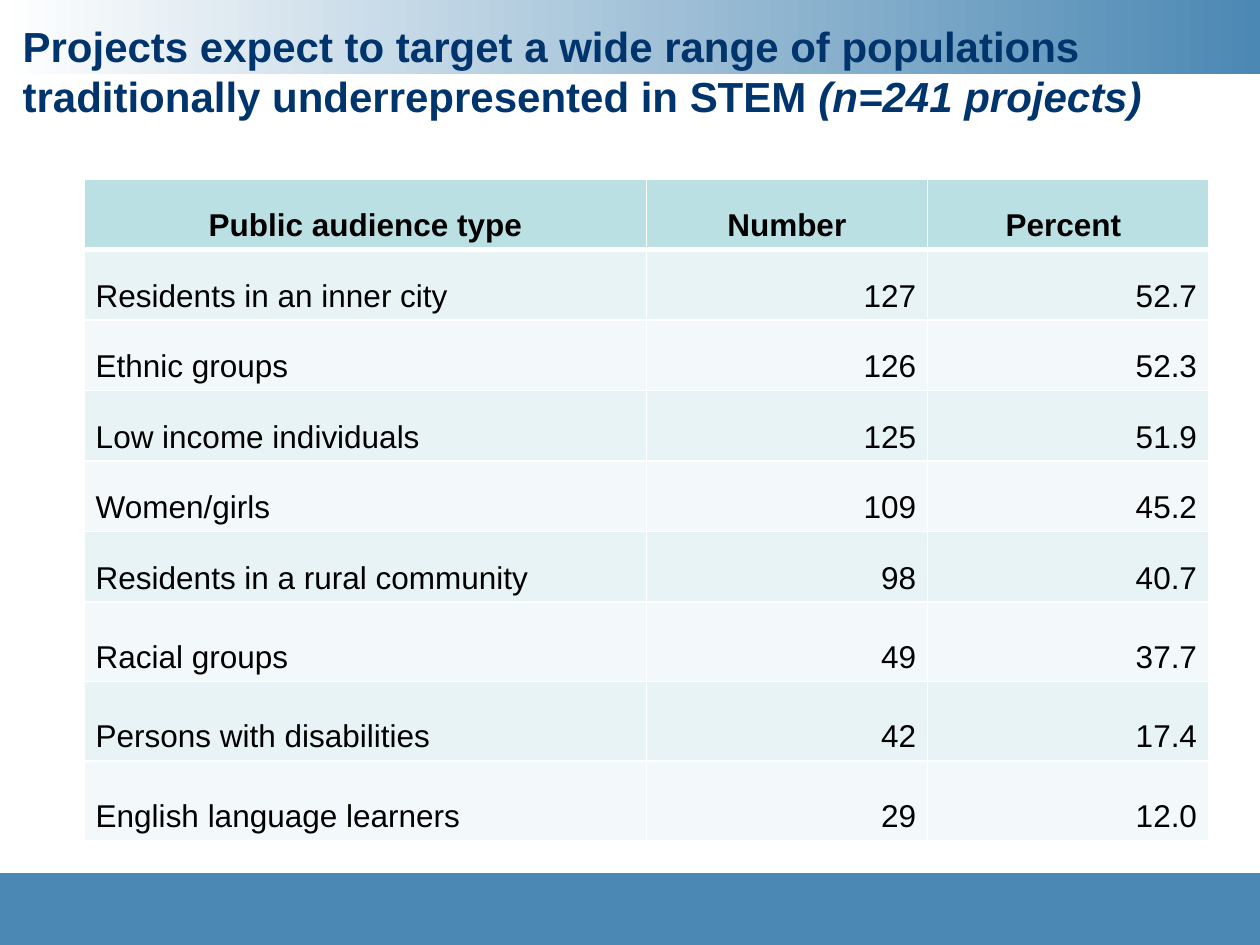
from dataclasses import dataclass

from lxml import etree
from pptx import Presentation
from pptx.dml.color import RGBColor
from pptx.enum.shapes import MSO_SHAPE
from pptx.enum.text import MSO_ANCHOR, MSO_AUTO_SIZE, PP_ALIGN
from pptx.oxml.ns import qn
from pptx.util import Inches, Pt

RECTANGLE = MSO_SHAPE.RECTANGLE
TOP, BOTTOM = MSO_ANCHOR.TOP, MSO_ANCHOR.BOTTOM
LEFT, CENTER, RIGHT = PP_ALIGN.LEFT, PP_ALIGN.CENTER, PP_ALIGN.RIGHT
NO_AUTOFIT = MSO_AUTO_SIZE.NONE
TITLE_ONLY = 5


@dataclass(frozen=True)
class Theme:
    font: str = "Arial"
    title_size: int = 24
    table_size: int = 18
    table_leading: int = 12
    title: str = "00346C"
    text: str = "000000"
    paper: str = "FFFFFF"
    band: str = "4B88B3"
    header: str = "BBE0E3"
    stripes: tuple = ("E7F3F4", "F3F9FA")


THEME = Theme()
SLIDE_WIDTH, SLIDE_HEIGHT = 10, 7.5
TOP_BAND, BOTTOM_BAND = 0.59, 0.57

TABLE_LEFT, TABLE_TOP, TABLE_WIDTH = 0.67, 1.42, 8.92
COLUMN_SHARES = (0.5, 0.25, 0.25)
ROW_HEIGHTS = [0.56] * 6 + [0.63] * 3
HEADINGS = ("Public audience type", "Number", "Percent ")
AUDIENCES = (
    ("Residents in an inner city", "127", "52.7"),
    ("Ethnic groups", "126", "52.3"),
    ("Low income individuals", "125", "51.9"),
    ("Women/girls", "109", "45.2"),
    ("Residents in a rural community", "98", "40.7"),
    ("Racial groups", "49", "37.7"),
    ("Persons with disabilities", "42", "17.4"),
    ("English language learners", "29", "12.0"),
)


def color(value):
    return RGBColor.from_string(value)


def style_font(font, size, value, bold):
    font.name = THEME.font
    font.size = Pt(size)
    font.bold = bold
    font.color.rgb = color(value)


def add_band(slide, top, height, fades_in=False):
    band = slide.shapes.add_shape(
        RECTANGLE, 0, Inches(top), Inches(SLIDE_WIDTH), Inches(height))
    band.shadow.inherit = False
    band.line.fill.background()
    if fades_in:
        band.fill.gradient()
        band.fill.gradient_angle = 0
        for stop, value in zip(band.fill.gradient_stops, (THEME.paper, THEME.band)):
            stop.color.rgb = color(value)
    else:
        band.fill.solid()
        band.fill.fore_color.rgb = color(THEME.band)


def fill_title(slide, statement, sample):
    title = slide.shapes.title
    title.left, title.top = Inches(0.08), Inches(0.08)
    title.width, title.height = Inches(9.75), Inches(1.01)
    frame = title.text_frame
    frame.word_wrap = True
    frame.auto_size = NO_AUTOFIT
    frame.vertical_anchor = TOP
    frame.margin_top = Inches(0.08)
    heading = frame.paragraphs[0]
    heading.alignment = LEFT
    style_font(heading.font, THEME.title_size, THEME.title, True)
    heading.add_run().text = statement
    sample_run = heading.add_run()
    sample_run.text = sample
    sample_run.font.italic = True
    # The title overlaps the top band, so it goes in front.
    slide.shapes._spTree.append(title._element)


def set_borders(cell, bottom_width, top_width):
    properties = cell._tc.get_or_add_tcPr()
    widths = {"a:lnL": 1, "a:lnR": 1, "a:lnT": top_width, "a:lnB": bottom_width}
    # Borders must precede the fill in the cell properties.
    for position, (side, width) in enumerate(widths.items()):
        line = etree.Element(qn(side), w=str(Pt(width)))
        fill = etree.SubElement(line, qn("a:solidFill"))
        etree.SubElement(fill, qn("a:srgbClr"), val=THEME.paper)
        properties.insert(position, line)


def fill_cell(cell, text, background, alignment, bold):
    cell.fill.solid()
    cell.fill.fore_color.rgb = color(background)
    cell.vertical_anchor = BOTTOM
    cell.margin_left = cell.margin_right = Inches(0.09)
    cell.margin_top = cell.margin_bottom = Inches(0.05)
    cell.text = text
    paragraph = cell.text_frame.paragraphs[0]
    paragraph.alignment = alignment
    paragraph.line_spacing = Pt(THEME.table_leading)
    style_font(paragraph.font, THEME.table_size, THEME.text, bold)


def add_audience_table(slide):
    rows = (HEADINGS,) + AUDIENCES
    table = slide.shapes.add_table(
        len(rows), len(HEADINGS), Inches(TABLE_LEFT), Inches(TABLE_TOP),
        Inches(TABLE_WIDTH), Inches(sum(ROW_HEIGHTS))).table
    table.horz_banding = False
    for column, share in zip(table.columns, COLUMN_SHARES):
        column.width = Inches(TABLE_WIDTH * share)
    for row, height in zip(table.rows, ROW_HEIGHTS):
        row.height = Inches(height)
    for r, values in enumerate(rows):
        is_header = r == 0
        background = THEME.header if is_header else THEME.stripes[(r - 1) % 2]
        for c, value in enumerate(values):
            alignment = CENTER if is_header else RIGHT if c else LEFT
            cell = table.cell(r, c)
            fill_cell(cell, value, background, alignment, is_header)
            set_borders(cell, 3 if is_header else 1, 3 if r == 1 else 1)


def main():
    deck = Presentation()
    deck.slide_width, deck.slide_height = Inches(SLIDE_WIDTH), Inches(SLIDE_HEIGHT)
    slide = deck.slides.add_slide(deck.slide_layouts[TITLE_ONLY])
    add_band(slide, 0, TOP_BAND, fades_in=True)
    add_band(slide, SLIDE_HEIGHT - BOTTOM_BAND, BOTTOM_BAND)
    fill_title(
        slide,
        "Projects expect to target a wide range of populations "
        "traditionally underrepresented in STEM ",
        "(n=241 projects)")
    add_audience_table(slide)
    deck.save("out.pptx")


if __name__ == "__main__":
    main()
